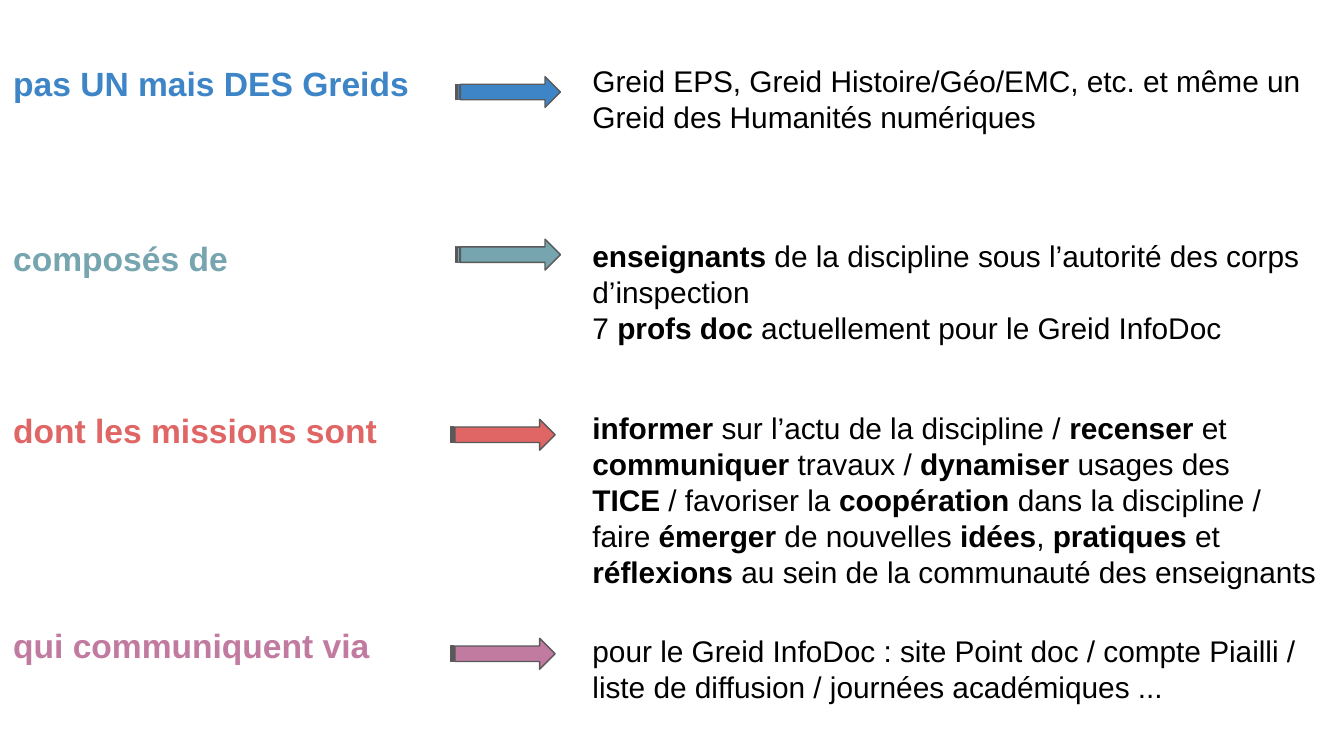
from dataclasses import dataclass

import pptx
import pptx.dml.color
import pptx.enum.shapes
import pptx.enum.text
import pptx.util
from pptx.util import Inches

FONT = "Arial"
BLACK = "000000"
LINE = "595959"
SLIDE_WIDTH = 10
LABEL_LEFT = 0
DETAIL_LEFT, DETAIL_WIDTH = 4.31, 5.6
ARROW_WIDTH, ARROW_HEIGHT = 0.78, 0.23


@dataclass
class Row:
    label: str
    color: str
    label_top: float
    label_width: float
    label_height: float
    arrow_left: float
    arrow_top: float
    detail_top: float
    detail_height: float
    details: list[str]  # one string per paragraph, **bold** marked


ROWS = [
    Row("pas UN mais DES Greids", "3D85C6", 0.37, 3.63, 0.63,
        3.39, 0.57, 0.37, 0.8,
        ["Greid EPS, Greid Histoire/Géo/EMC, etc. et même un "
         "Greid des Humanités numériques"]),
    Row("composés de", "76A5AF", 1.67, 3.25, 0.72,
        3.39, 1.78, 1.67, 1.81,
        ["**enseignants** de la discipline sous l’autorité des corps d’inspection",
         "7 **profs doc** actuellement pour le Greid InfoDoc"]),
    Row("dont les missions sont", "E06666", 2.95, 3.17, 0.43,
        3.35, 3.12, 2.95, 0.95,
        ["**informer** sur l’actu de la discipline / **recenser **et "
         "**communiquer** travaux / **dynamiser** usages des **TICE** / "
         "favoriser la **coopération** dans la discipline / faire **émerger** "
         "de nouvelles **idées**, **pratiques** et **réflexions** au sein de "
         "la communauté des enseignants"]),
    Row("qui communiquent via", "C27BA0", 4.55, 2.96, 0.43,
        3.35, 4.75, 4.61, 0.95,
        ["pour le Greid InfoDoc : site Point doc / compte Piailli / "
         "liste de diffusion / journées académiques ..."]),
]


def rgb(value: str) -> pptx.dml.color.RGBColor:
    return pptx.dml.color.RGBColor.from_string(value)


def add_text(s, left: float, top: float, width: float, height: float,
             paragraphs: list[str], size: int, color: str) -> None:
    """Add a text box; parts between ** marks are bold."""
    tf = s.shapes.add_textbox(Inches(left), Inches(top),
                              Inches(width), Inches(height)).text_frame
    tf.word_wrap = True
    tf.vertical_anchor = pptx.enum.text.MSO_ANCHOR.TOP
    tf.margin_left = tf.margin_right = Inches(0.1)
    tf.margin_top = tf.margin_bottom = Inches(0.1)
    for i, text in enumerate(paragraphs):
        p = tf.add_paragraph() if i else tf.paragraphs[0]
        p.line_spacing = 1.0
        p.font.name = FONT
        p.font.size = pptx.util.Pt(size)
        p.font.color.rgb = rgb(color)
        for j, part in enumerate(text.split("**")):
            if part:
                r = p.add_run()
                r.text = part
                r.font.bold = j % 2 == 1


def add_arrow(s, left: float, top: float, color: str) -> None:
    sp = s.shapes.add_shape(
        pptx.enum.shapes.MSO_SHAPE.STRIPED_RIGHT_ARROW,
        Inches(left), Inches(top), Inches(ARROW_WIDTH), Inches(ARROW_HEIGHT))
    sp.shadow.inherit = False
    sp.fill.solid()
    sp.fill.fore_color.rgb = rgb(color)
    sp.line.color.rgb = rgb(LINE)
    sp.line.width = pptx.util.Pt(0.75)


def add_row(s, row: Row) -> None:
    add_text(s, LABEL_LEFT, row.label_top, row.label_width, row.label_height,
             [f"**{row.label}**"], 18, row.color)
    add_arrow(s, row.arrow_left, row.arrow_top, row.color)
    add_text(s, DETAIL_LEFT, row.detail_top, DETAIL_WIDTH, row.detail_height,
             row.details, 16, BLACK)


def main() -> None:
    prs = pptx.Presentation()
    prs.slide_width = Inches(SLIDE_WIDTH)
    prs.slide_height = Inches(SLIDE_WIDTH * 9 / 16)
    s = prs.slides.add_slide(prs.slide_layouts.get_by_name("Blank"))
    for row in ROWS:
        add_row(s, row)
    prs.save("out.pptx")


if __name__ == "__main__":
    main()
